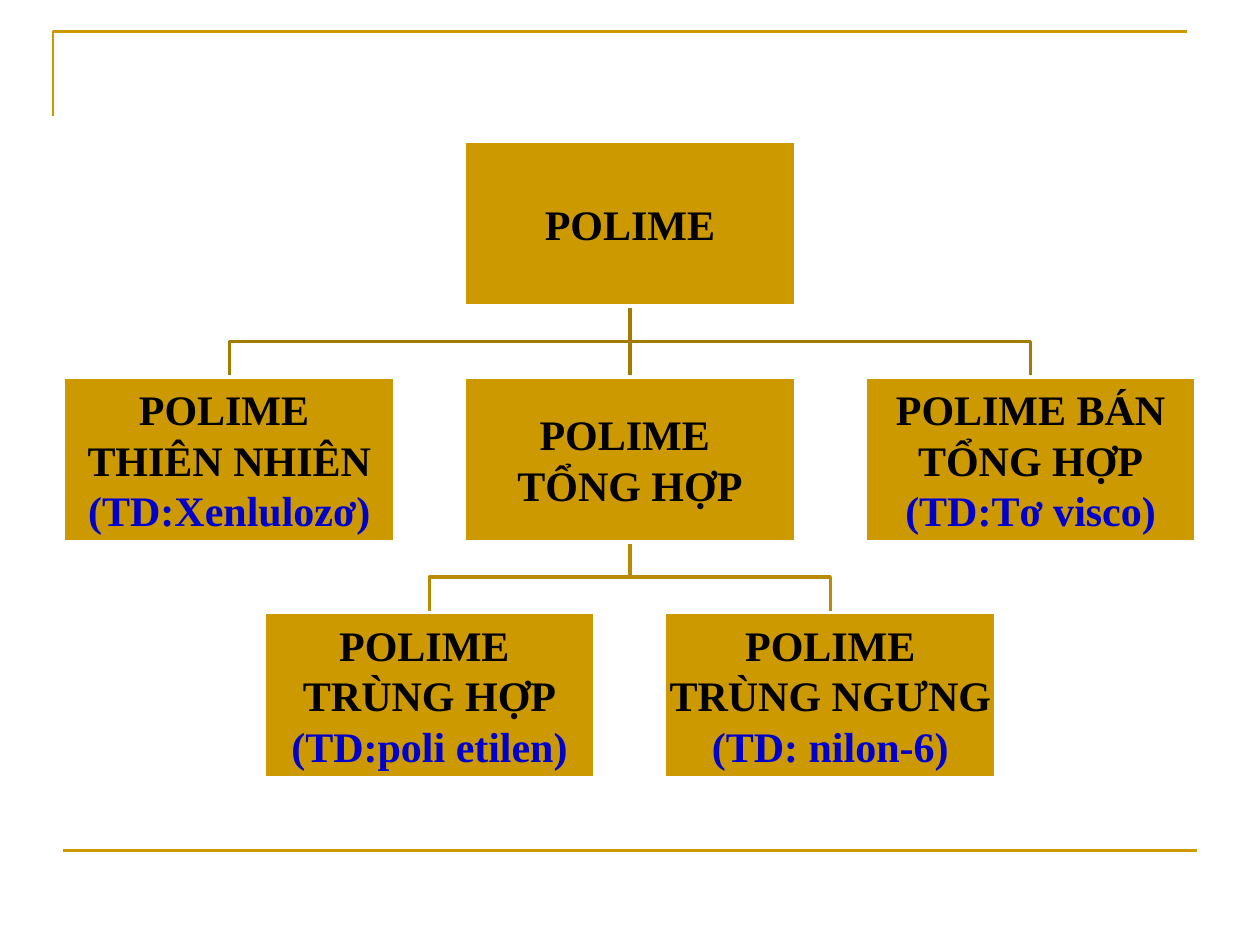
from lxml.etree import SubElement
from pptx import Presentation
from pptx.dml.color import RGBColor
from pptx.enum.shapes import MSO_CONNECTOR, MSO_SHAPE
from pptx.enum.text import MSO_ANCHOR, PP_ALIGN
from pptx.oxml.ns import qn
from pptx.util import Inches, Pt

COLORS = {
    "gold": "CC9900",
    "upper_branch": "A37B00",
    "lower_branch": "B98B00",
    "border": "FFFFFF",
    "name": "000000",
    "example": "0000CC",
}

# Column is counted from the centre of the slide; a line in brackets is an example
POLYMERS = [
    {"column": 0, "level": 0, "lines": ["POLIME"]},
    {"column": -1, "level": 1, "lines": ["POLIME ", "THIÊN NHIÊN", "(TD:Xenlulozơ)"]},
    {"column": 0, "level": 1, "lines": ["POLIME ", "TỔNG HỢP"]},
    {"column": 1, "level": 1, "lines": ["POLIME BÁN", "TỔNG HỢP", "(TD:Tơ visco)"]},
    {"column": -0.5, "level": 2, "lines": ["POLIME ", "TRÙNG HỢP", "(TD:poli etilen)"]},
    {"column": 0.5, "level": 2, "lines": ["POLIME", "TRÙNG NGƯNG", "(TD: nilon-6)"]},
]
BRANCH_COLORS = {1: "upper_branch", 2: "lower_branch"}

SLIDE_WIDTH, SLIDE_HEIGHT = 10, 7.5
CENTER = SLIDE_WIDTH / 2
BOX_WIDTH, BOX_HEIGHT = 2.63, 1.31
COLUMN_PITCH, LEVEL_PITCH = 3.18, 1.87
TREE_TOP = 1.12
TEXT_FORMAT = {"name": "Times New Roman", "size": Pt(24), "bold": True}
FRAME_FORMAT = {
    "word_wrap": True,
    "vertical_anchor": MSO_ANCHOR.MIDDLE,
    **{f"margin_{side}": Inches(0.02) for side in ("left", "right", "top", "bottom")},
}


def apply(target, formats):
    for attribute, value in formats.items():
        setattr(target, attribute, value)


def rgb(color):
    return RGBColor.from_string(COLORS[color])


def set_line(shape, color, width):
    shape.line.color.rgb = rgb(color)
    shape.line.width = Pt(width)


def draw_route(slide, points, color, width):
    """Draw a straight connector for two points, an open outline for more."""
    points = [(Inches(x), Inches(y)) for x, y in points]
    if len(points) == 2:
        route = slide.shapes.add_connector(MSO_CONNECTOR.STRAIGHT, *points[0], *points[1])
        set_line(route, color, width)
        SubElement(route._element.spPr, qn("a:effectLst"))
        return
    builder = slide.shapes.build_freeform(*points[0])
    builder.add_line_segments(points[1:], close=False)
    route = builder.convert_to_shape()
    route.fill.background()
    route.shadow.inherit = False
    set_line(route, color, width)


def level_top(level):
    return TREE_TOP + level * LEVEL_PITCH


def column_center(column):
    return CENTER + column * COLUMN_PITCH


def draw_branch(slide, column, level):
    """Join a polymer to its parent in the middle column of the level above."""
    start, end = level_top(level - 1) + BOX_HEIGHT, level_top(level)
    bend, x = (start + end) / 2, column_center(column)
    bends = [(CENTER, bend), (x, bend)] if column else []
    draw_route(slide, [(CENTER, start), *bends, (x, end)], BRANCH_COLORS[level], 2)


def draw_polymer(slide, column, level, lines):
    box = slide.shapes.add_shape(
        MSO_SHAPE.RECTANGLE,
        Inches(column_center(column) - BOX_WIDTH / 2), Inches(level_top(level)),
        Inches(BOX_WIDTH), Inches(BOX_HEIGHT),
    )
    box.shadow.inherit = False
    box.fill.solid()
    box.fill.fore_color.rgb = rgb("gold")
    set_line(box, "border", 2)
    frame = box.text_frame
    apply(frame, FRAME_FORMAT)
    for index, line in enumerate(lines):
        paragraph = frame.add_paragraph() if index else frame.paragraphs[0]
        paragraph.alignment = PP_ALIGN.CENTER
        run = paragraph.add_run()
        run.text = line
        apply(run.font, TEXT_FORMAT)
        run.font.color.rgb = rgb("example" if line.startswith("(") else "name")


def main():
    presentation = Presentation()
    presentation.slide_width = Inches(SLIDE_WIDTH)
    presentation.slide_height = Inches(SLIDE_HEIGHT)
    slide = presentation.slides.add_slide(presentation.slide_layouts[6])

    draw_route(slide, [(0.42, 0.92), (0.42, 0.25), (9.42, 0.25)], "gold", 1.5)
    draw_route(slide, [(0.5, 6.75), (9.5, 6.75)], "gold", 1.5)
    for polymer in POLYMERS:
        if polymer["level"]:
            draw_branch(slide, polymer["column"], polymer["level"])
    for polymer in POLYMERS:
        draw_polymer(slide, **polymer)
    presentation.save("out.pptx")


if __name__ == "__main__":
    main()
